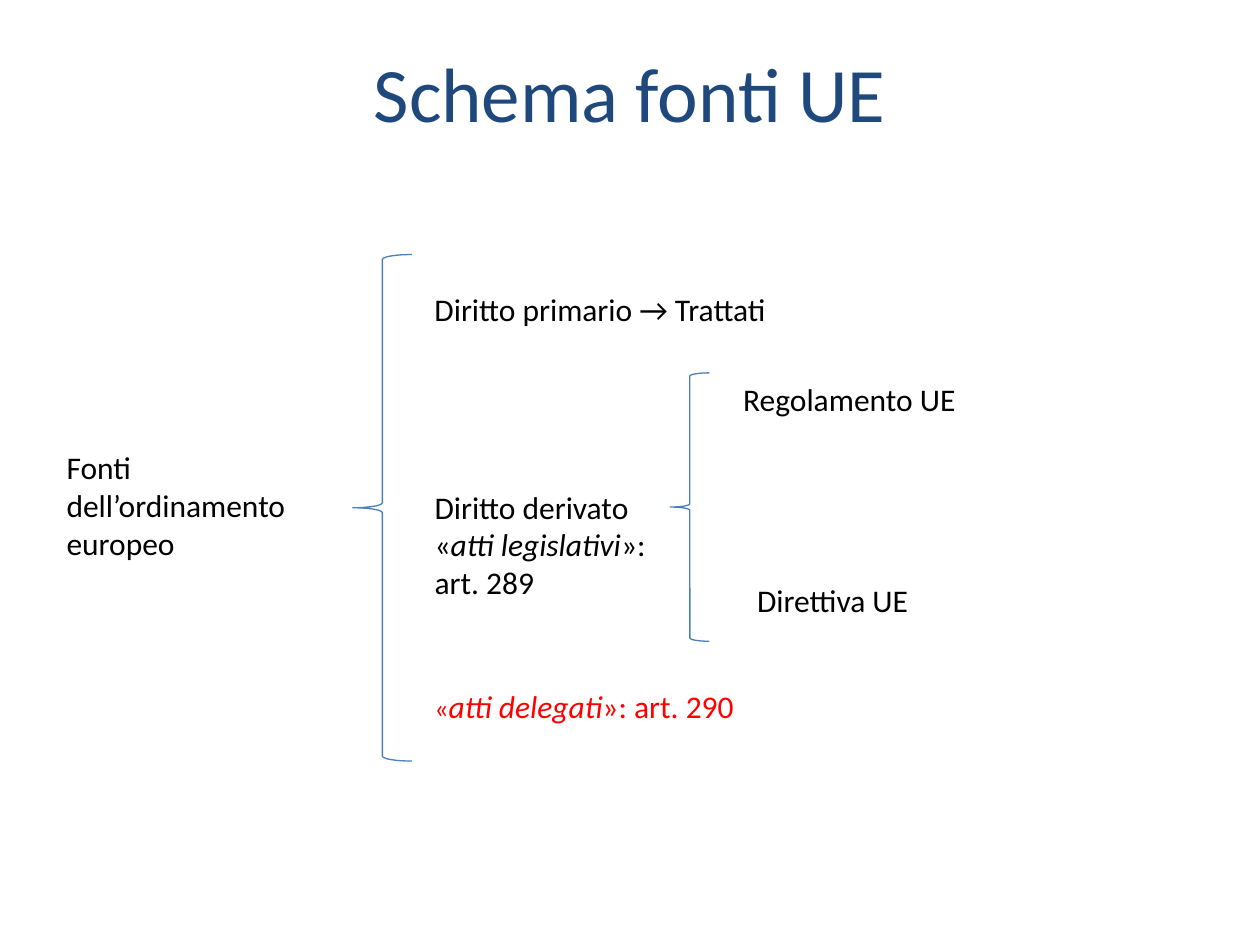
from dataclasses import dataclass

from pptx import Presentation
from pptx.dml.color import RGBColor
from pptx.enum.shapes import MSO_SHAPE as Shape
from pptx.enum.text import MSO_ANCHOR as Anchor, PP_ALIGN as Align
from pptx.util import Inches, Pt


@dataclass(frozen=True)
class Theme:
    font: str = "Calibri"
    title_color: str = "1F497D"
    text_color: str = "000000"
    accent_color: str = "FF0000"
    brace_color: str = "4B7EBC"
    title_size: int = 44
    body_size: int = 18
    small_size: int = 16
    brace_width: float = 0.75


THEME = Theme()
BRANCH_LEFT = 3.35


def add_span(para, text, size=THEME.body_size, color=THEME.text_color, italic=False):
    span = para.add_run()
    span.text = text
    span.font.name = THEME.font
    span.font.size = Pt(size)
    span.font.italic = italic
    span.font.color.rgb = RGBColor.from_string(color)


def place(shape, left, top, width, height):
    shape.left, shape.top = Inches(left), Inches(top)
    shape.width, shape.height = Inches(width), Inches(height)


def add_title(page, text):
    title = page.shapes.title
    place(title, 0.5, 0.3, 9, 0.85)
    title.text_frame.vertical_anchor = Anchor.MIDDLE
    para = title.text_frame.paragraphs[0]
    para.alignment = Align.CENTER
    add_span(para, text, size=THEME.title_size, color=THEME.title_color)


def add_label(page, left, top, width, *lines, height=0.4):
    box = page.shapes.add_textbox(
        Inches(left), Inches(top), Inches(width), Inches(height))
    frame = box.text_frame
    frame.word_wrap = True
    for index, line in enumerate(lines):
        para = frame.add_paragraph() if index else frame.paragraphs[0]
        for text, style in line:
            add_span(para, text, **style)


def add_brace(page, left, top, width, height):
    brace = page.shapes.add_shape(
        Shape.LEFT_BRACE, Inches(left), Inches(top), Inches(width), Inches(height))
    brace.shadow.inherit = False
    brace.fill.background()
    brace.line.color.rgb = RGBColor.from_string(THEME.brace_color)
    brace.line.width = Pt(THEME.brace_width)


def main():
    deck = Presentation()
    deck.slide_width, deck.slide_height = Inches(10), Inches(7.5)
    page = deck.slides.add_slide(deck.slide_layouts.get_by_name("Title Only"))
    red = {"color": THEME.accent_color}

    add_title(page, "Schema fonti UE")

    add_label(page, 0.43, 3.51, 2.05,
              [("Fonti dell’ordinamento europeo", {})], height=1.01)
    add_brace(page, 2.8, 2.02, 0.47, 4.02)

    add_label(page, BRANCH_LEFT, 2.25, 3.46, [("Diritto primario → Trattati", {})])
    add_label(page, BRANCH_LEFT, 3.82, 2.05,
              [("Diritto derivato", {})],
              [("«", {}), ("atti legislativi", {"italic": True}), ("»:", {})],
              [("art. 289", {})], height=1.01)
    add_label(page, BRANCH_LEFT, 5.4, 3.46,
              [("«", {"size": THEME.small_size, **red}),
               ("atti delegati", {"italic": True, **red}),
               ("»: art. 290", red)])

    add_brace(page, 5.32, 2.96, 0.31, 2.13)
    add_label(page, 5.8, 2.97, 1.97, [("Regolamento UE", {})])
    add_label(page, 5.91, 4.56, 1.81, [("Direttiva UE", {})])

    deck.save("out.pptx")


if __name__ == "__main__":
    main()
